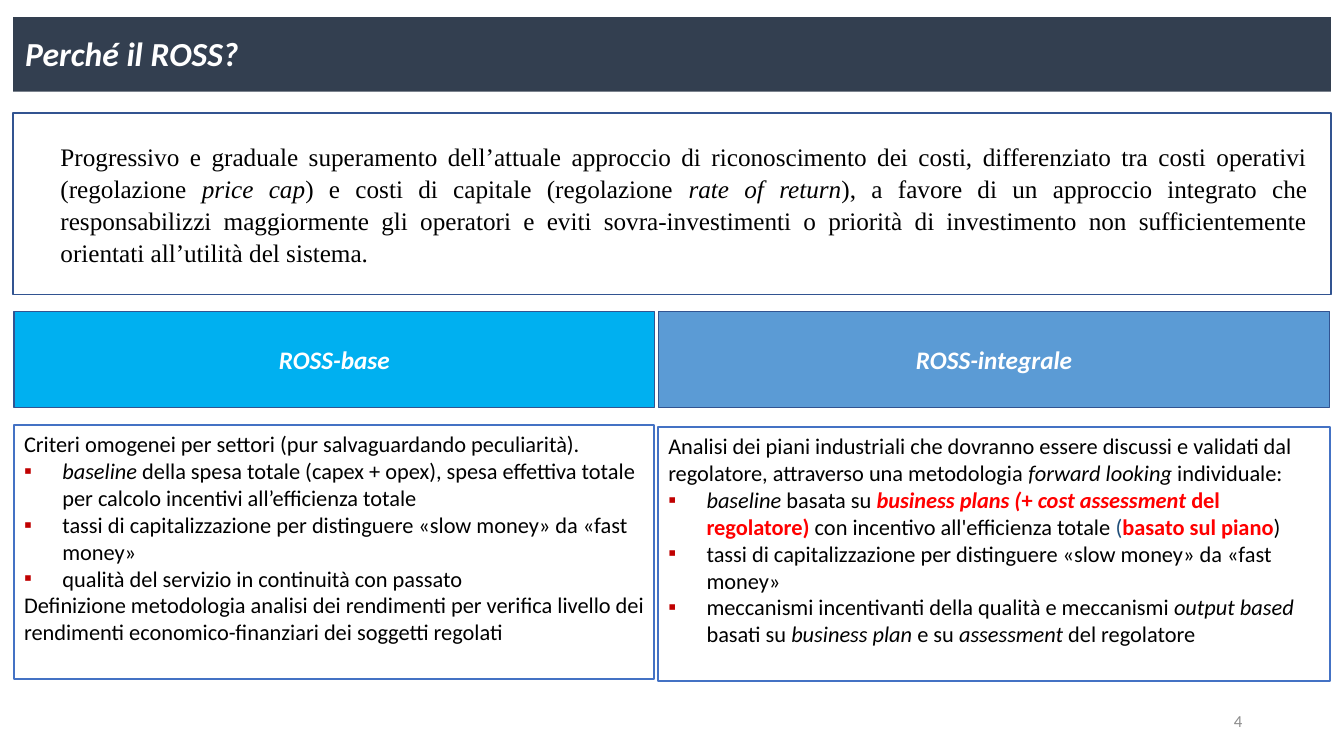
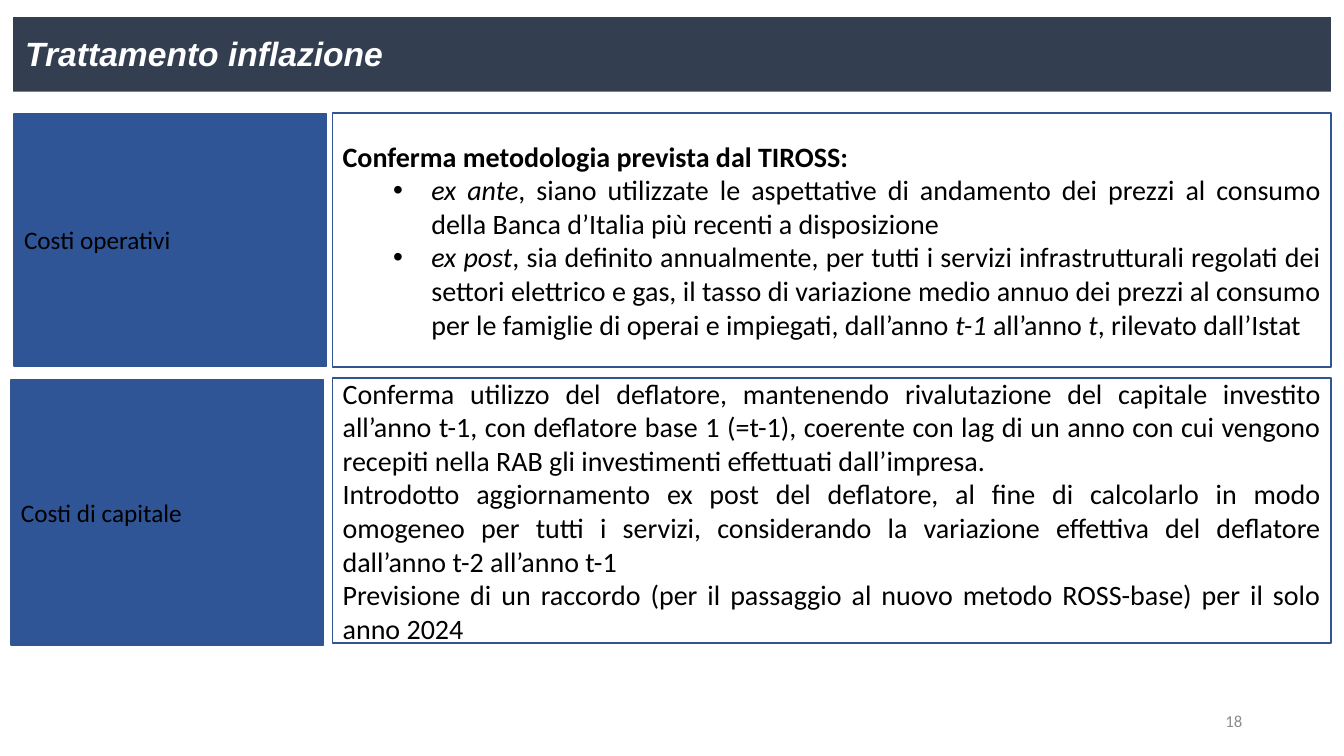
from lxml.etree import SubElement
from pptx import Presentation
from pptx.dml.color import RGBColor
from pptx.enum.shapes import MSO_SHAPE
from pptx.enum.text import MSO_ANCHOR, MSO_AUTO_SIZE, PP_ALIGN
from pptx.oxml.ns import qn
from pptx.util import Pt

PX = 9144  # 100 px to the inch

WHITE = RGBColor(0xFF, 0xFF, 0xFF)
BLACK = RGBColor(0x00, 0x00, 0x00)
SLATE = RGBColor(0x33, 0x3F, 0x50)
NAVY = RGBColor(0x32, 0x54, 0x91)
DEEP_BLUE = RGBColor(0x2F, 0x55, 0x97)
MID_BLUE = RGBColor(0x44, 0x72, 0xC4)
SKY = RGBColor(0x00, 0xB0, 0xF0)
STEEL = RGBColor(0x5B, 0x9B, 0xD5)
INK_BLUE = RGBColor(0x1F, 0x4E, 0x79)
RED = RGBColor(0xFF, 0x00, 0x00)
DARK_RED = RGBColor(0xC0, 0x00, 0x00)
GREY = RGBColor(0x8C, 0x8C, 0x8C)

# bullet kind: character, left margin px, hanging px, colour
BULLETS = {
    "square": ("▪", 38, 38, DARK_RED),
    "dot": ("•", 88, 38, BLACK),
}
RUN_COLORS = {"r": RED, "n": INK_BLUE}

# A paragraph is (bullet kind or None, runs); a run is plain text or
# (text, flags) with i = italic, b = bold, r = red, n = ink blue.
INTRO = [
    (None, [
        "Progressivo e graduale superamento dell’attuale approccio di riconoscimento dei costi, "
        "differenziato tra costi operativi (regolazione ",
        ("price cap", "i"), ") e costi di capitale (regolazione ", ("rate of return", "i"),
        "), a favore di un approccio integrato che responsabilizzi maggiormente gli operatori e "
        "eviti sovra-investimenti o priorità di investimento non sufficientemente orientati "
        "all’utilità del sistema.",
    ]),
]
CAPITALISATION = ("square", [
    "tassi di capitalizzazione per distinguere «slow money» da «fast money»"])
ROSS_BASE = [
    (None, ["Criteri omogenei per settori (pur salvaguardando peculiarità)."]),
    ("square", [
        ("baseline ", "i"),
        "della spesa totale (capex + opex), spesa effettiva totale per calcolo incentivi "
        "all’efficienza totale",
    ]),
    CAPITALISATION,
    ("square", ["qualità del servizio in continuità con passato"]),
    (None, [
        "Definizione metodologia analisi dei rendimenti per verifica livello dei rendimenti "
        "economico-finanziari dei soggetti regolati",
    ]),
]
ROSS_INTEGRALE = [
    (None, [
        "Analisi dei piani industriali che dovranno essere discussi e validati dal regolatore, "
        "attraverso una metodologia ",
        ("forward looking ", "i"), "individuale:",
    ]),
    ("square", [
        ("baseline", "i"), " basata su ", ("business plans (", "bir"), ("+ ", "br"),
        ("cost assessment ", "bir"), ("del regolatore) ", "br"),
        "con incentivo all'efficienza totale ", ("(", "n"), ("basato sul piano", "br"), ")",
    ]),
    CAPITALISATION,
    ("square", [
        "meccanismi incentivanti della qualità e meccanismi ", ("output based", "i"),
        " basati su ", ("business plan ", "i"), "e su ", ("assessment", "i"), " del regolatore",
    ]),
]
# heading, heading fill, left, width, body top, body
APPROACHES = [
    ("ROSS-base", SKY, 14, 635, 422, ROSS_BASE),
    ("ROSS-integrale", STEEL, 653, 666, 424, ROSS_INTEGRALE),
]

OPERATING_COSTS = [
    (None, [("Conferma metodologia prevista dal TIROSS:", "b")]),
    ("dot", [
        ("ex ante", "i"),
        ", siano utilizzate le aspettative di andamento dei prezzi al consumo della Banca "
        "d’Italia più recenti a disposizione",
    ]),
    ("dot", [
        ("ex post", "i"),
        ", sia definito annualmente, per tutti i servizi infrastrutturali regolati dei settori "
        "elettrico e gas, il tasso di variazione medio annuo dei prezzi al consumo per le "
        "famiglie di operai e impiegati, dall’anno ",
        ("t-1", "i"), " all’anno ", ("t", "i"), ", rilevato dall’Istat",
    ]),
]
CAPITAL_COSTS = [
    (None, [
        "Conferma utilizzo del deflatore, mantenendo rivalutazione del capitale investito "
        "all’anno t-1, con deflatore base 1 (=t-1), coerente con lag di un anno con cui vengono "
        "recepiti nella RAB gli investimenti effettuati dall’impresa.",
    ]),
    (None, [
        "Introdotto aggiornamento ex post del deflatore, al fine di calcolarlo in modo omogeneo "
        "per tutti i servizi, considerando la variazione effettiva del deflatore dall’anno t-2 "
        "all’anno t-1",
    ]),
    (None, [
        "Previsione di un raccordo (per il passaggio al nuovo metodo ROSS-base) per il solo "
        "anno 2024",
    ]),
]
# label, label box, text box, text
COST_ROWS = [
    ("Costi operativi", (14, 113, 310, 250), (330, 112, 990, 252), OPERATING_COSTS),
    ("Costi di capitale", (11, 377, 310, 263), (330, 375, 990, 263), CAPITAL_COSTS),
]


def px(*values):
    return [value * PX for value in values]


def plain(text, flags=""):
    return [(None, [(text, flags)])]


def add_bullet(paragraph, kind):
    character, margin, hanging, color = BULLETS[kind]
    properties = paragraph._p.get_or_add_pPr()
    properties.set("marL", str(margin * PX))
    properties.set("indent", str(-hanging * PX))
    bullet_color = SubElement(properties, qn("a:buClr"))
    SubElement(bullet_color, qn("a:srgbClr")).set("val", str(color))
    SubElement(properties, qn("a:buFont")).set("typeface", "Arial")
    SubElement(properties, qn("a:buChar")).set("char", character)


def write(frame, paragraphs, size, color=BLACK, align=PP_ALIGN.LEFT,
          anchor=MSO_ANCHOR.MIDDLE, font="Calibri", line_spacing=None):
    frame.word_wrap = True
    frame.auto_size = MSO_AUTO_SIZE.NONE
    frame.vertical_anchor = anchor
    for index, (bullet, runs) in enumerate(paragraphs):
        paragraph = frame.add_paragraph() if index else frame.paragraphs[0]
        paragraph.alignment = align
        if line_spacing:
            paragraph.line_spacing = line_spacing
        if bullet:
            add_bullet(paragraph, bullet)
        paragraph.font.name = font
        paragraph.font.size = Pt(size)
        paragraph.font.color.rgb = color
        for item in runs:
            text, flags = (item, "") if isinstance(item, str) else item
            run = paragraph.add_run()
            run.text = text
            if "b" in flags:
                run.font.bold = True
            if "i" in flags:
                run.font.italic = True
            for flag in RUN_COLORS.keys() & set(flags):
                run.font.color.rgb = RUN_COLORS[flag]


def add_box(slide, box, fill=None, line=NAVY, line_width=1):
    shape = slide.shapes.add_shape(MSO_SHAPE.RECTANGLE, *px(*box))
    shape.shadow.inherit = False
    if fill is None:
        shape.fill.background()
    else:
        shape.fill.solid()
        shape.fill.fore_color.rgb = fill
    shape.line.color.rgb = line
    shape.line.width = Pt(line_width)
    return shape


def add_slide(presentation, title, number, title_font="Calibri"):
    """Add a slide with the title band and the page number."""
    slide = presentation.slides.add_slide(presentation.slide_layouts[5])
    band = slide.shapes.title
    band.left, band.top, band.width, band.height = px(13, 17, 1307, 74)
    band.fill.solid()
    band.fill.fore_color.rgb = SLATE
    frame = band.text_frame
    frame.margin_left, frame.margin_top, frame.margin_right, frame.margin_bottom = px(12, 16, 10, 0)
    write(frame, plain(title, "bi"), 24, WHITE, anchor=MSO_ANCHOR.TOP, font=title_font)

    page = slide.shapes.add_textbox(*px(942, 695, 300, 40))
    write(page.text_frame, plain(str(number)), 12, GREY, PP_ALIGN.RIGHT)
    return slide


def build_reasons(presentation):
    slide = add_slide(presentation, "Perché il ROSS?", 4)
    intro = add_box(slide, (13, 112, 1307, 180)).text_frame
    intro.margin_left, intro.margin_right = px(47, 23)
    write(intro, INTRO, 18, align=PP_ALIGN.JUSTIFY, font="Times New Roman", line_spacing=1.05)
    for heading, fill, left, width, body_top, body in APPROACHES:
        header = add_box(slide, (left, 309, width, 95), fill)
        write(header.text_frame, plain(heading, "bi"), 18, WHITE, PP_ALIGN.CENTER)
        panel = add_box(slide, (left, body_top, width, 252), line=MID_BLUE, line_width=1.5)
        write(panel.text_frame, body, 16, anchor=MSO_ANCHOR.TOP)


def build_inflation(presentation):
    slide = add_slide(presentation, "Trattamento inflazione", 18, "Arial")
    for label, label_box, text_box, text in COST_ROWS:
        write(add_box(slide, label_box, DEEP_BLUE).text_frame, plain(label), 18)
        write(add_box(slide, text_box).text_frame, text, 20, align=PP_ALIGN.JUSTIFY)


def main():
    presentation = Presentation()
    presentation.slide_width, presentation.slide_height = px(1333, 750)
    build_reasons(presentation)
    build_inflation(presentation)
    presentation.save("out.pptx")


if __name__ == "__main__":
    main()
